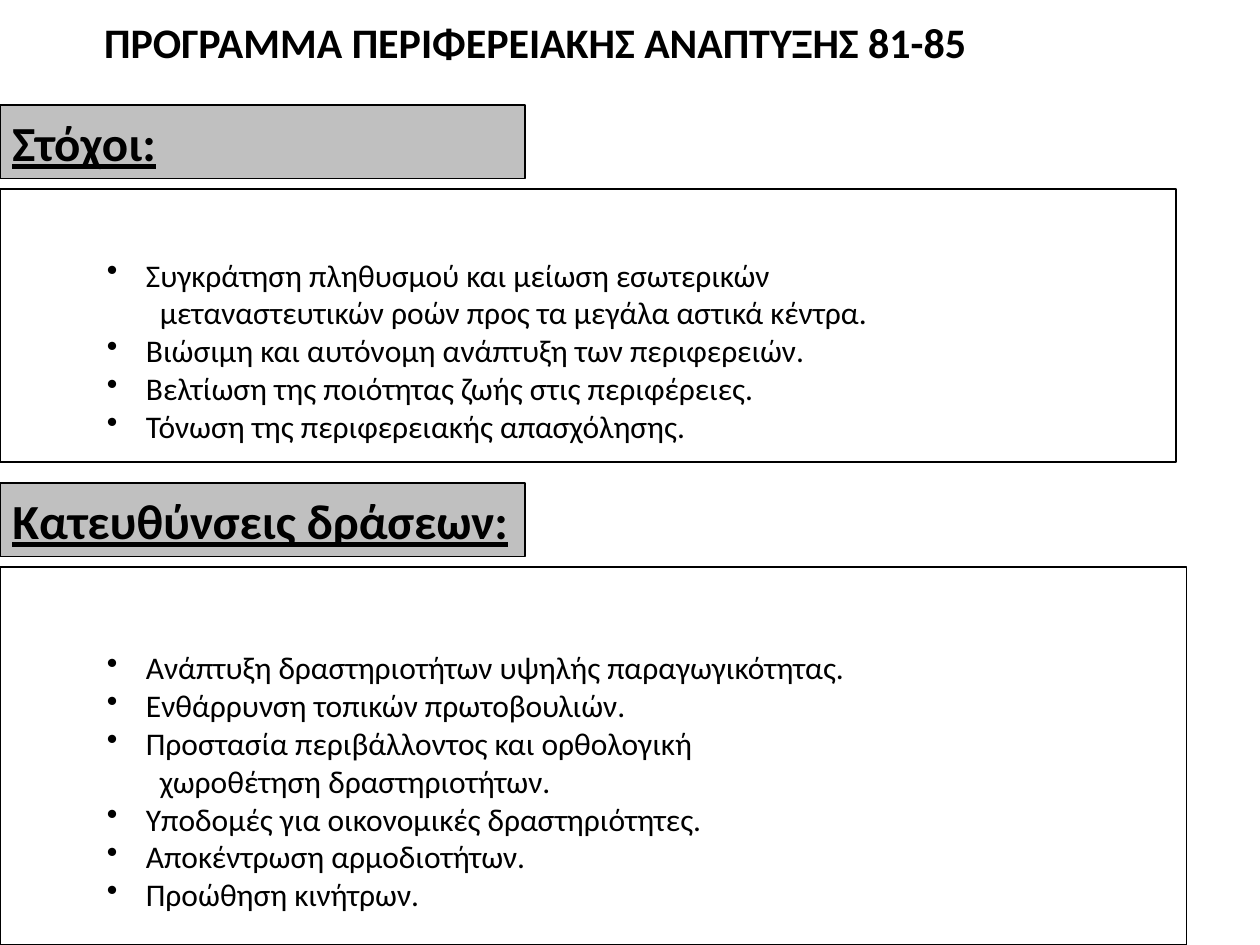
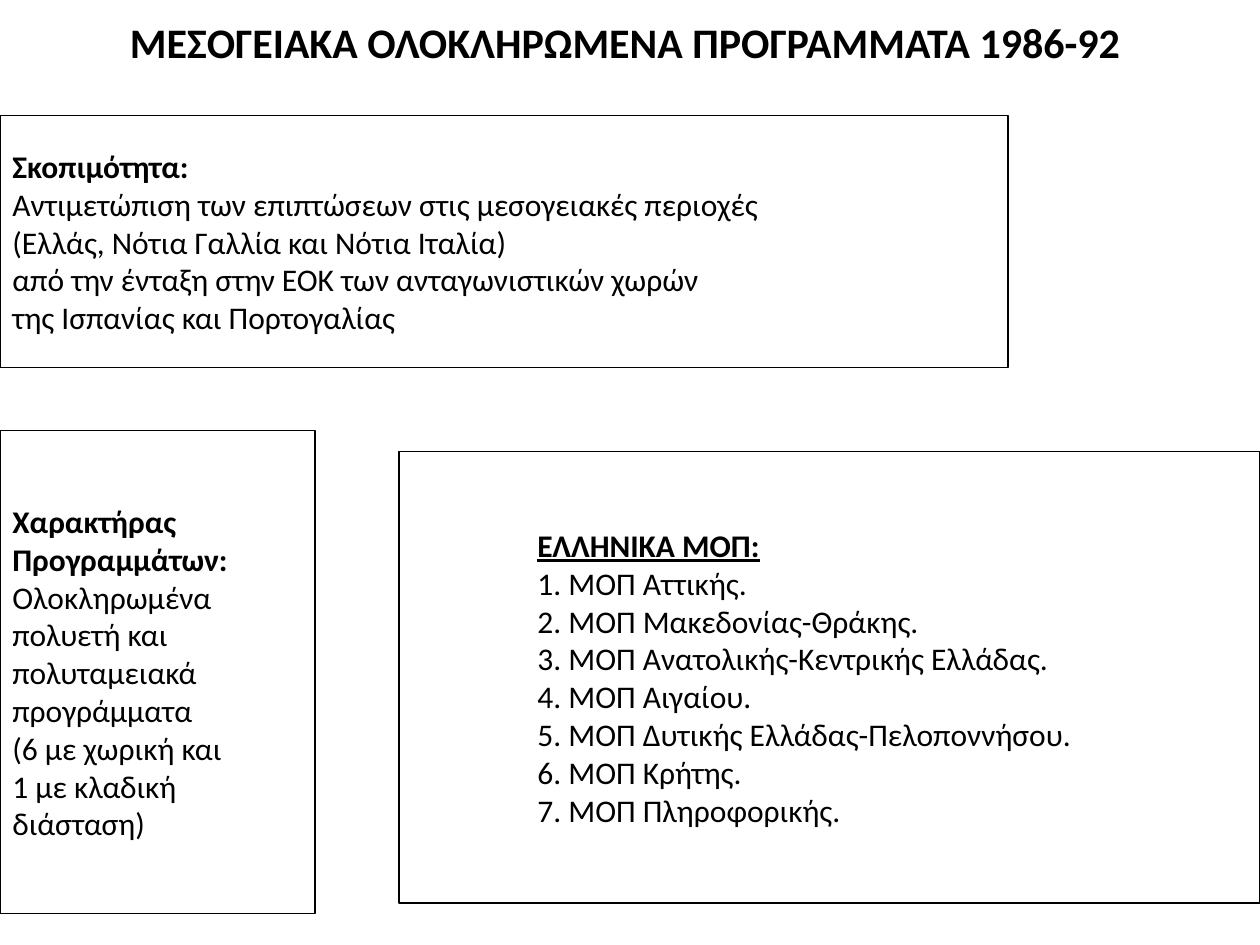
from lxml import etree
from pptx import Presentation
from pptx.dml.color import RGBColor
from pptx.enum import shapes, text
from pptx.oxml import ns
from pptx.util import Inches, Pt

BLACK = RGBColor(0x00, 0x00, 0x00)
SILVER = RGBColor(0xC0, 0xC0, 0xC0)
FONT = "Calibri"
COLUMNS, ROWS = 120, 90
WIDTH, HEIGHT = Inches(10), Inches(7.5)
TITLE_ROWS = 8
TITLE_LAYOUT = 5
BULLET_MARGIN, BULLET_HANG, CONTINUATION_MARGIN = 1.06, 0.31, 1.17

GOALS = [
    "Συγκράτηση πληθυσμού και μείωση εσωτερικών\n"
    "μεταναστευτικών ροών προς τα μεγάλα αστικά κέντρα.",
    "Βιώσιμη και αυτόνομη ανάπτυξη των περιφερειών.",
    "Βελτίωση της ποιότητας ζωής στις περιφέρειες.",
    "Τόνωση της περιφερειακής απασχόλησης.",
]
ACTIONS = [
    "Ανάπτυξη δραστηριοτήτων υψηλής παραγωγικότητας.",
    "Ενθάρρυνση τοπικών πρωτοβουλιών.",
    "Προστασία περιβάλλοντος και ορθολογική\nχωροθέτηση δραστηριοτήτων.",
    "Υποδομές για οικονομικές δραστηριότητες.",
    "Αποκέντρωση αρμοδιοτήτων.",
    "Προώθηση κινήτρων.",
]
PURPOSE = [
    "Αντιμετώπιση των επιπτώσεων στις μεσογειακές περιοχές",
    "(Ελλάς, Νότια Γαλλία και Νότια Ιταλία)",
    "από την ένταξη στην ΕΟΚ των ανταγωνιστικών χωρών",
    "της Ισπανίας και Πορτογαλίας",
]
CHARACTER = [
    "Ολοκληρωμένα",
    "πολυετή και",
    "πολυταμειακά",
    "προγράμματα",
    "(6 με χωρική και",
    "1 με κλαδική",
    "διάσταση)",
]
GREEK_PROGRAMMES = [
    "Αττικής",
    "Μακεδονίας-Θράκης",
    "Ανατολικής-Κεντρικής Ελλάδας",
    "Αιγαίου",
    "Δυτικής Ελλάδας-Πελοποννήσου",
    "Κρήτης",
    "Πληροφορικής",
]


def place(item, box):
    column, row, columns, rows = box
    item.left, item.width = (round(WIDTH * n / COLUMNS) for n in (column, columns))
    item.top, item.height = (round(HEIGHT * n / ROWS) for n in (row, rows))


def write(frame, line, size=18, bold=False, underline=False,
          align=text.PP_ALIGN.LEFT, margin=0, hang=0, bullet=None):
    paragraph = frame.paragraphs[0]
    if paragraph.runs:
        paragraph = frame.add_paragraph()
    paragraph.alignment = align
    run = paragraph.add_run()
    run.text = line
    font = run.font
    font.name, font.size, font.bold, font.underline = FONT, Pt(size), bold, underline
    font.color.rgb = BLACK
    properties = paragraph._p.get_or_add_pPr()
    properties.set("marL", str(Inches(margin)))
    properties.set("indent", str(-Inches(hang)))
    if bullet:
        etree.SubElement(properties, ns.qn("a:buChar")).set("char", bullet)
    else:
        etree.SubElement(properties, ns.qn("a:buNone"))


def titled_slide(deck, heading, columns):
    slide = deck.slides.add_slide(deck.slide_layouts[TITLE_LAYOUT])
    title = slide.shapes.title
    place(title, (0, 0, columns, TITLE_ROWS))
    title.text_frame.vertical_anchor = text.MSO_ANCHOR.MIDDLE
    write(title.text_frame, heading, size=24, bold=True, align=text.PP_ALIGN.CENTER)
    return slide


def panel(slide, box, fill=None):
    frame_box = slide.shapes.add_shape(shapes.MSO_SHAPE.RECTANGLE, 0, 0, 0, 0)
    place(frame_box, box)
    frame_box.shadow.inherit = False
    frame_box.line.color.rgb = BLACK
    frame_box.line.width = Pt(0.75)
    if fill is None:
        frame_box.fill.background()
    else:
        frame_box.fill.solid()
        frame_box.fill.fore_color.rgb = fill
    frame = frame_box.text_frame
    frame.word_wrap = True
    frame.vertical_anchor = text.MSO_ANCHOR.MIDDLE
    return frame


def bulleted_section(slide, heading, points, box):
    column, row, columns, rows = box
    band = panel(slide, (column, row, 50, 7), SILVER)
    band.margin_right = 0
    write(band, heading, size=28, bold=True, underline=True)
    body = panel(slide, (column, row + 8, columns, rows - 8))
    body.margin_top = Inches(0.44)
    for point in points:
        first, *rest = point.split("\n")
        write(body, first, margin=BULLET_MARGIN, hang=BULLET_HANG, bullet="•")
        for line in rest:
            write(body, line, margin=CONTINUATION_MARGIN)


def headed_box(slide, headings, lines, box, underline=False, margin=0):
    frame = panel(slide, box)
    for heading in headings:
        write(frame, heading, bold=True, underline=underline, margin=margin)
    for line in lines:
        write(frame, line, margin=margin)


def regional_programme(deck):
    slide = titled_slide(deck, "ΠΡΟΓΡΑΜΜΑ ΠΕΡΙΦΕΡΕΙΑΚΗΣ ΑΝΑΠΤΥΞΗΣ 81-85", 102)
    bulleted_section(slide, "Στόχοι:", GOALS, (0, 10, 112, 34))
    bulleted_section(slide, "Κατευθύνσεις δράσεων:", ACTIONS, (0, 46, 113, 44))


def mediterranean_programmes(deck):
    slide = titled_slide(deck, "ΜΕΣΟΓΕΙΑΚΑ ΟΛΟΚΛΗΡΩΜΕΝΑ ΠΡΟΓΡΑΜΜΑΤΑ 1986-92 ", COLUMNS)
    headed_box(slide, ["Χαρακτήρας", "Προγραμμάτων:"], CHARACTER, (0, 41, 30, 46))
    numbered = [f"{n}. ΜΟΠ {area}." for n, area in enumerate(GREEK_PROGRAMMES, 1)]
    headed_box(slide, ["ΕΛΛΗΝΙΚΑ ΜΟΠ:"], numbered, (38, 43, 82, 43),
               underline=True, margin=1)
    headed_box(slide, ["Σκοπιμότητα:"], PURPOSE, (0, 11, 96, 24))


def main():
    deck = Presentation()
    deck.slide_width, deck.slide_height = WIDTH, HEIGHT
    regional_programme(deck)
    mediterranean_programmes(deck)
    deck.save("out.pptx")


if __name__ == "__main__":
    main()
